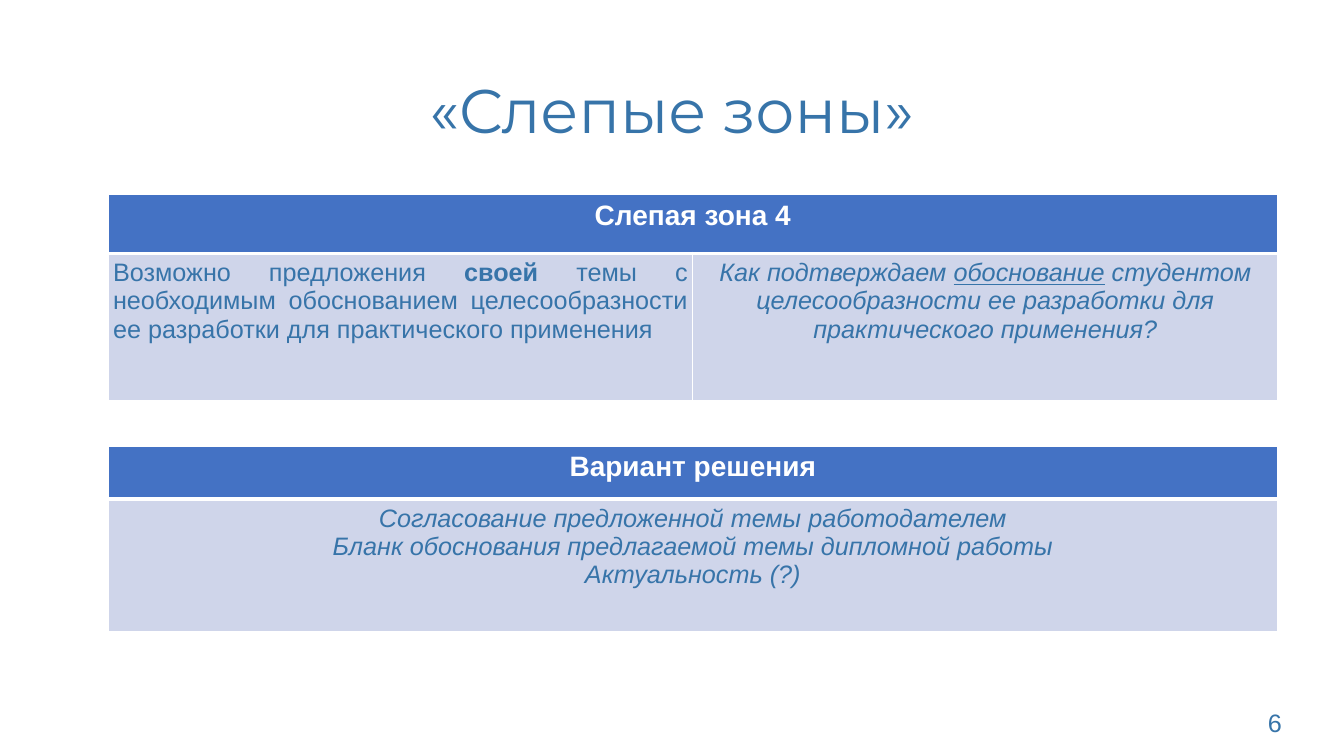
"""Build the slide «Слепые зоны» with a blind-spot table and a solution table."""
from lxml import etree
from pptx import Presentation
from pptx.dml.color import RGBColor
from pptx.enum import text
from pptx.oxml import ns
from pptx.util import Cm, Pt

BLUE = RGBColor(0x37, 0x74, 0xA9)
HEADER = RGBColor(0x44, 0x72, 0xC4)
PALE = RGBColor(0xCF, 0xD5, 0xEA)
WHITE = RGBColor(0xFF, 0xFF, 0xFF)
CENTER = text.PP_ALIGN.CENTER
JUSTIFY = text.PP_ALIGN.JUSTIFY

TITLE = "«Слепые зоны»"
PAGE_NUMBER = "6"
TABLES = [
    {
        "top": 4.91, "heights": (1.48, 3.71), "inset": 0.13,
        "header": "Слепая зона 4",
        "cells": [
            (JUSTIFY, [[("Возможно предложения ", ""), ("своей", "b"),
                        (" темы с необходимым обоснованием целесообразности "
                         "ее разработки для практического применения", "")]]),
            (CENTER, [[("Как подтверждаем ", "i"), ("обоснование", "iu"),
                       (" студентом целесообразности ее разработки "
                        "для практического применения?", "i")]]),
        ],
    },
    {
        "top": 11.24, "heights": (1.34, 3.33), "inset": 0.25,
        "header": "Вариант решения",
        "cells": [
            (CENTER, [[("Согласование предложенной темы работодателем", "i")],
                      [("Бланк обоснования предлагаемой темы дипломной работы", "i")],
                      [("Актуальность (?)", "i")]]),
        ],
    },
]
TABLE_LEFT, TABLE_WIDTH = 2.72, 29.48


def add_span(para, words, size, color, style="", font="Arial"):
    """Add one formatted run to a paragraph."""
    span = para.add_run()
    span.text = words
    span.font.name = font
    span.font.size = Pt(size)
    span.font.color.rgb = color
    span.font.bold = "b" in style
    span.font.italic = "i" in style
    span.font.underline = "u" in style


def fill_cell(cell, paragraphs, align, size, color):
    """Write paragraphs of styled runs into a cell."""
    for index, spans in enumerate(paragraphs):
        frame = cell.text_frame
        para = frame.add_paragraph() if index else frame.paragraphs[0]
        para.alignment = align
        for words, style in spans:
            add_span(para, words, size, color, style)


def format_cell(cell, row, inset):
    """Set margins, white borders and fill of a cell."""
    cell.margin_left = cell.margin_right = Cm(inset)
    cell.margin_top = cell.margin_bottom = Cm(0.13)
    properties = cell._tc.get_or_add_tcPr()
    widths = {"lnL": 1, "lnR": 1, "lnT": 3 if row else 1, "lnB": 1 if row else 3}
    for side, width in widths.items():
        line = etree.SubElement(properties, ns.qn(f"a:{side}"), w=str(Pt(width)))
        solid = etree.SubElement(line, ns.qn("a:solidFill"))
        etree.SubElement(solid, ns.qn("a:srgbClr"), val=str(WHITE))
    cell.fill.solid()
    cell.fill.fore_color.rgb = PALE if row else HEADER


def add_zone_table(page, content):
    """Add a table with one full-width header row and one content row."""
    cells, heights = content["cells"], content["heights"]
    table = page.shapes.add_table(
        2, len(cells), Cm(TABLE_LEFT), Cm(content["top"]),
        Cm(TABLE_WIDTH), Cm(sum(heights))).table
    for column in table.columns:
        column.width = Cm(TABLE_WIDTH / len(cells))
    for row, height in enumerate(heights):
        table.rows[row].height = Cm(height)
        for column in range(len(cells)):
            format_cell(table.cell(row, column), row, content["inset"])
    if len(cells) > 1:
        table.cell(0, 0).merge(table.cell(0, len(cells) - 1))
    fill_cell(table.cell(0, 0), [[(content["header"], "b")]], CENTER, 20, WHITE)
    for column, (align, paragraphs) in enumerate(cells):
        fill_cell(table.cell(1, column), paragraphs, align, 18, BLUE)


def main():
    """Assemble and save the deck."""
    deck = Presentation()
    deck.slide_width, deck.slide_height = Cm(33.87), Cm(19.05)
    page = deck.slides.add_slide(deck.slide_layouts[5])

    title = page.shapes.title
    title.left, title.top, title.width, title.height = Cm(2.33), Cm(1.01), Cm(29.21), Cm(3.68)
    title.text_frame.vertical_anchor = text.MSO_ANCHOR.MIDDLE
    para = title.text_frame.paragraphs[0]
    para.alignment = CENTER
    para.line_spacing = 0.9
    add_span(para, TITLE, 44, BLUE, font="Montserrat")

    for content in TABLES:
        add_zone_table(page, content)

    box = page.shapes.add_textbox(Cm(31.7), Cm(17.7), Cm(1.75), Cm(1.02))
    box.text_frame.word_wrap = True
    add_span(box.text_frame.paragraphs[0], PAGE_NUMBER, 18, BLUE)

    deck.save("out.pptx")


if __name__ == "__main__":
    main()
